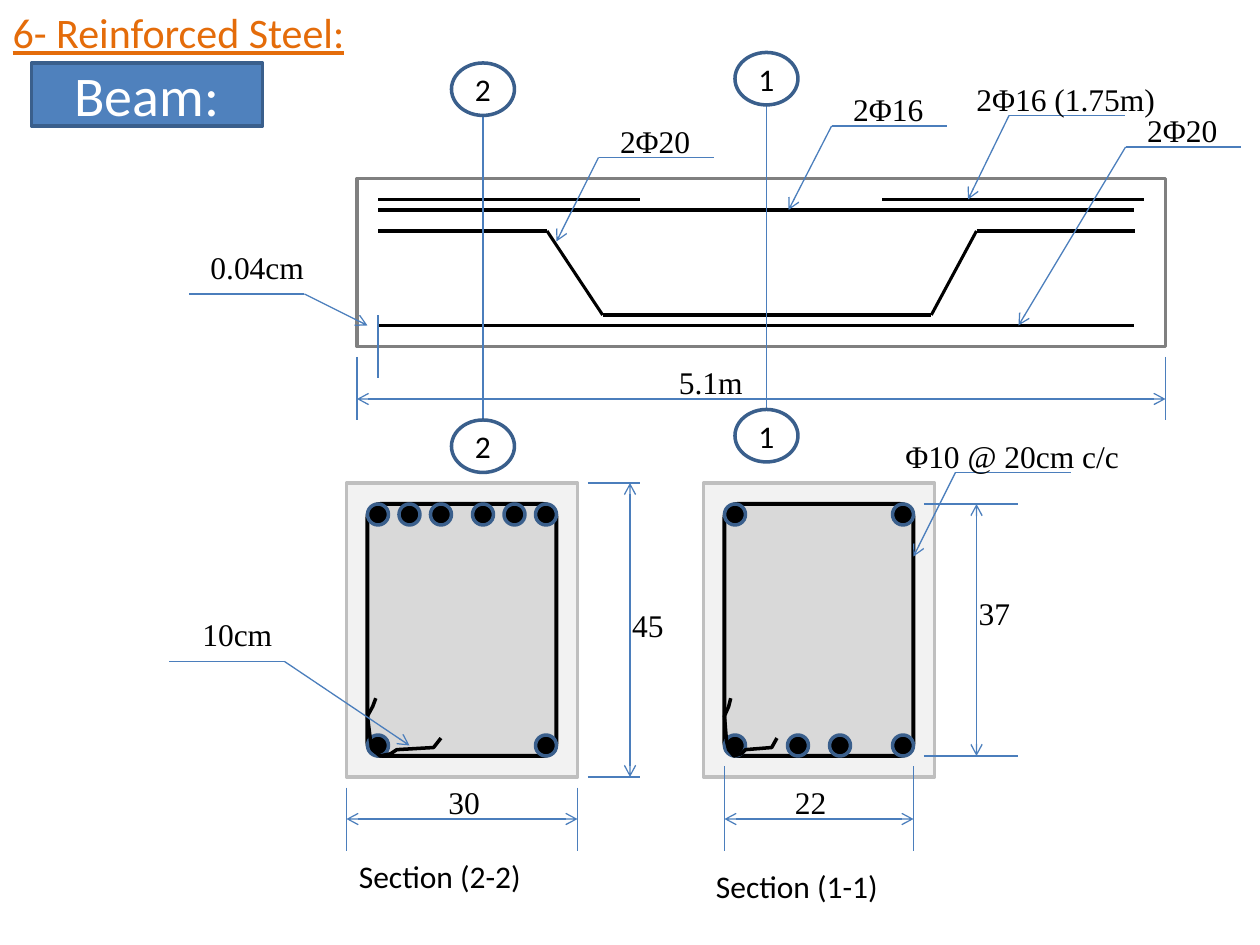
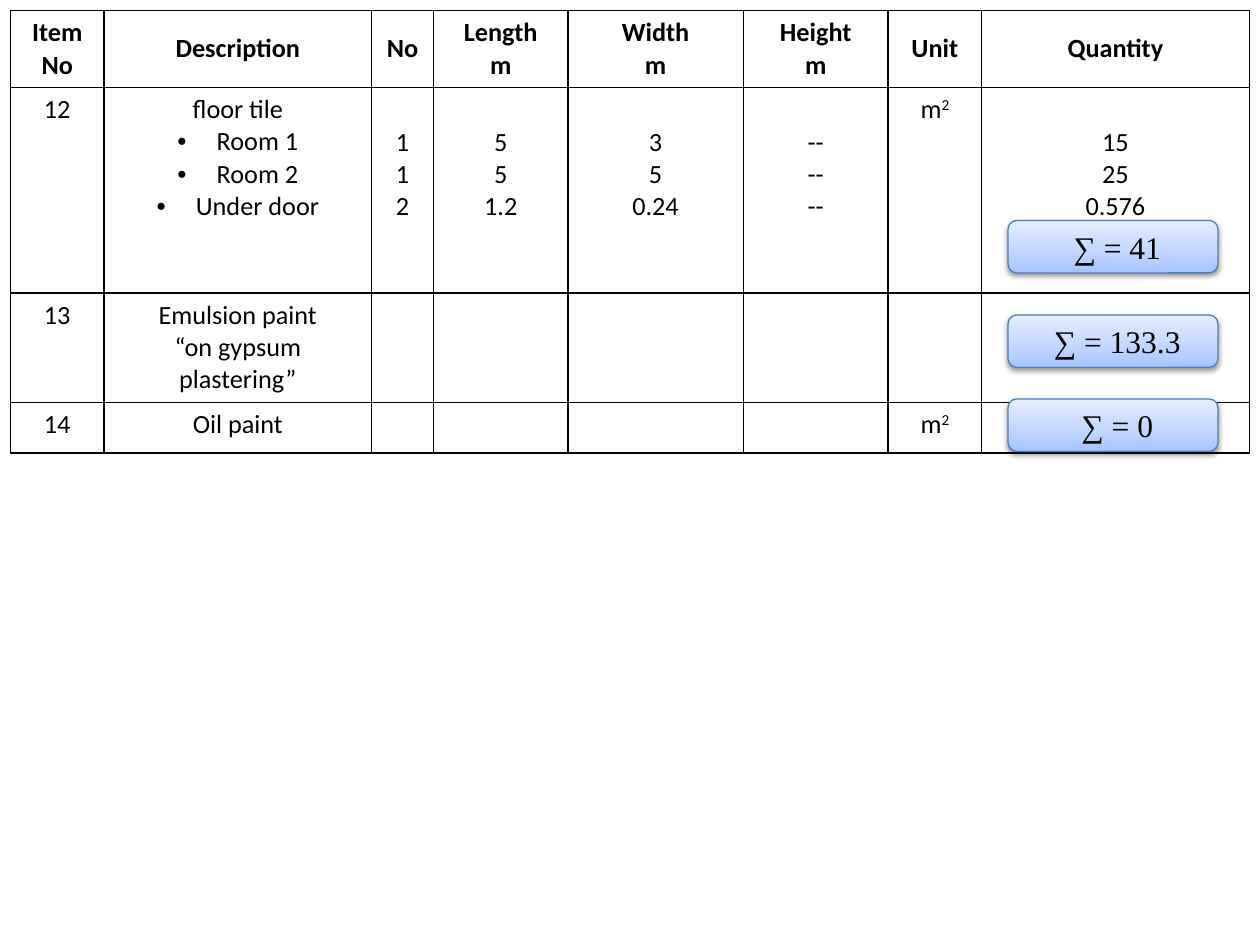
from lxml.etree import SubElement
from pptx import Presentation
from pptx.dml.color import RGBColor
from pptx.enum.shapes import MSO_CONNECTOR, MSO_SHAPE
from pptx.enum.text import MSO_ANCHOR, PP_ALIGN
from pptx.oxml.ns import qn
from pptx.util import Pt

PX = 7620  # EMU per px, 120 px to the inch
SANS, SERIF = "Calibri", "Times New Roman"
BLACK, WHITE, ORANGE = "000000", "FFFFFF", "E46C0A"
BLUE, EDGE_BLUE, LINE_BLUE = "4F81BD", "3A5F8C", "4B7EBC"
GREY, FRAME_EDGE, FRAME_FILL, CORE_FILL = "808080", "BFBFBF", "F2F2F2", "D9D9D9"

# ---- Content: beam drawing ----
HEADING, MEMBER = "6- Reinforced Steel:", "Beam:"
BEAM = (340, 170, 770, 160)
STRAIGHT_BARS = [((360, 200), (1080, 200)), ((360, 310), (1080, 310)),
                 ((840, 190), (1090, 190)), ((360, 190), (610, 190))]
BENT_BAR = [(360, 220), (521, 220), (574, 300), (887, 300), (930, 220), (1081, 220)]
COVER_TICK = ((360, 300), (360, 360))
# number, centre x, top of upper circle
CUTS = [("1", 730, 50), ("2", 460, 60)]
CUT_DROP = 340
# caption, frame left, caption top, top bars, bottom bars, hook width
SECTIONS = [
    ("Section (1-1)", 670, 820, (20, 180), (20, 80, 120, 180), 50),
    ("Section (2-2)", 330, 810, (20, 50, 80, 120, 150, 180), (20, 180), 70),
]
SECTION_TOP, SECTION_W, SECTION_H, COVER, BAR = 460, 220, 280, 20, 20
# x as a share of 70, y on the slide
HOOK = [(8, 665), (5, 673), (0, 682), (3, 706), (5, 714), (12, 720),
        (22, 718), (28, 714), (63, 712), (70, 703)]
# label, elbow, arrow tip, shelf direction
LEADERS = [
    ("2Φ20", (570, 150), (530, 230), 1),
    ("2Φ16", (792, 120), (751, 200), 1),
    ("2Φ16 (1.75m)", (961, 110), (922, 190), 1),
    ("2Φ20", (1072, 140), (970, 310), 1),
    ("0.04cm", (290, 280), (350, 310), -1),
    ("10cm", (271, 630), (390, 710), -1),
    ("Φ10 @ 20cm c/c", (910, 450), (870, 530), 1),
]
SHELF = 110
# label, start, end, extension line range, label centre x and top
DIMENSIONS = [
    ("5.1m", (340, 380), (1110, 380), (340, 400), (677, 340)),
    ("30", (330, 780), (550, 780), (750, 810), (442, 740)),
    ("22", (690, 780), (870, 780), (730, 810), (772, 740)),
    ("45", (600, 740), (600, 460), (560, 610), (617, 571)),
    ("37", (930, 720), (930, 480), (880, 970), (947, 560)),
]

# ---- Content: quantity table ----
COLUMN_WIDTHS = [89, 255, 59, 128, 167, 138, 89, 255]
ROW_HEIGHTS = [73, 196, 104, 48]
LINE_PITCH = 31
BULLET = "• "
HEADER = ["Item No", "Description", "No", "Length\nm", "Width\nm", "Height\nm",
          "Unit", "Quantity"]
ITEMS = [
    ["12", "floor tile\n• Room 1\n• Room 2\n• Under door", "1\n1\n2", "5\n5\n1.2",
     "3\n5\n0.24", "--\n--\n--", "m^2", "15\n25\n0.576"],
    ["13", "Emulsion paint\n“on gypsum plastering”", "", "", "", "", "", ""],
    ["14", "Oil paint", "", "", "", "", "m^2", ""],
]
TOTALS = [("∑ = 41", 210), ("∑ = 133.3", 300), ("∑ = 0", 380)]
TOTAL_GRADIENT = [(0, "A4C4FF"), (35, "BFD4FF"), (100, "E6EEFF")]


# ---- Shared helpers ----
def px(*lengths):
    return [round(length * PX) for length in lengths]


def rgb(code):
    return RGBColor.from_string(code)


def style(paragraph, size, font=SANS, color=BLACK, align=PP_ALIGN.CENTER, bold=False):
    paragraph.alignment = align
    paragraph.font.size = Pt(size)
    paragraph.font.name = font
    paragraph.font.bold = bold
    paragraph.font.color.rgb = rgb(color)


def outline(shape, color, width):
    shape.line.color.rgb = rgb(color)
    shape.line.width = Pt(width)


def add_figure(slide, kind, box, fill, edge, width=2):
    figure = slide.shapes.add_shape(kind, *px(*box))
    figure.shadow.inherit = False
    if fill:
        figure.fill.solid()
        figure.fill.fore_color.rgb = rgb(fill)
    else:
        figure.fill.background()
    outline(figure, edge, width)
    return figure


def write(shape, words, size, **look):
    frame = shape.text_frame
    frame.text = words
    frame.vertical_anchor = MSO_ANCHOR.MIDDLE
    style(frame.paragraphs[0], size, **look)


def add_line(slide, start, end, color=LINE_BLUE, width=0.75, arrows=()):
    line = slide.shapes.add_connector(MSO_CONNECTOR.STRAIGHT, *px(*start, *end))
    outline(line, color, width)
    properties = line._element.spPr
    for arrow in arrows:
        SubElement(properties.find(qn("a:ln")), qn(f"a:{arrow}"), type="arrow")
    SubElement(properties, qn("a:effectLst"))


def add_label(slide, words, left, top, width, wrap=False, **look):
    label = slide.shapes.add_textbox(*px(left, top, width, 48))
    label.text_frame.word_wrap = wrap
    label.text_frame.text = words
    style(label.text_frame.paragraphs[0], 18, **look)


def add_note(slide, words, center, top):
    add_label(slide, words, center - 115, top, 230, font=SERIF)


# ---- Beam slide parts ----
def draw_section(slide, caption, left, caption_top, top_bars, bottom_bars, hook_width):
    frame = add_figure(slide, MSO_SHAPE.FRAME,
                       (left, SECTION_TOP, SECTION_W, SECTION_H), FRAME_FILL, FRAME_EDGE)
    frame.adjustments[0] = 0.11
    stirrup_h = SECTION_H - 2 * COVER
    stirrup = add_figure(slide, MSO_SHAPE.ROUNDED_RECTANGLE,
                         (left + COVER, SECTION_TOP + COVER, SECTION_W - 2 * COVER, stirrup_h),
                         CORE_FILL, BLACK, 2.25)
    stirrup.adjustments[0] = 0.07
    top = SECTION_TOP + COVER
    for bars, bar_top in ((top_bars, top), (bottom_bars, top + stirrup_h - BAR)):
        for offset in bars:
            add_figure(slide, MSO_SHAPE.OVAL, (left + offset, bar_top, BAR, BAR),
                       BLACK, EDGE_BLUE)
    points = [(left + COVER + x * hook_width / 70, y) for x, y in HOOK]
    builder = slide.shapes.build_freeform(*points[0], scale=PX)
    builder.add_line_segments(points[1:], close=False)
    hook = builder.convert_to_shape()
    hook.shadow.inherit = False
    hook.fill.background()
    outline(hook, BLACK, 2)
    add_label(slide, caption, left, caption_top, 220, wrap=True, align=PP_ALIGN.LEFT)


def draw_cut(slide, number, center, top):
    add_line(slide, (center, top + 50), (center, top + CUT_DROP))
    for circle_top in (top, top + CUT_DROP):
        circle = add_figure(slide, MSO_SHAPE.OVAL, (center - 30, circle_top, 60, 50),
                            None, EDGE_BLUE)
        write(circle, number, 18)


def draw_leader(slide, words, elbow, tip, direction):
    x, y = elbow
    add_line(slide, elbow, tip, arrows=["tailEnd"])
    add_line(slide, elbow, (x + direction * SHELF, y))
    if direction > 0:
        add_note(slide, words, x + 54, y - 40)
    else:
        add_note(slide, words, x - 45, y - 50)


def draw_dimension(slide, words, start, end, extension, label_at):
    horizontal = start[1] == end[1]
    for x, y in (start, end):
        ends = [(x, v) if horizontal else (v, y) for v in extension]
        add_line(slide, *ends)
    add_line(slide, start, end, arrows=["headEnd", "tailEnd"])
    add_note(slide, words, *label_at)


def build_beam_slide(deck):
    slide = deck.slides.add_slide(deck.slide_layouts[5])
    heading = slide.shapes.title
    heading.left, heading.top, heading.width, heading.height = px(0, 0, 1200, 80)
    write(heading, HEADING, 24, color=ORANGE, align=PP_ALIGN.LEFT)
    heading.text_frame.vertical_anchor = MSO_ANCHOR.TOP
    heading.text_frame.paragraphs[0].font.underline = True
    heading.text_frame.paragraphs[0].space_before = Pt(5)

    for section in SECTIONS:
        draw_section(slide, *section)
    member = add_figure(slide, MSO_SHAPE.RECTANGLE, (30, 60, 220, 60), BLUE, EDGE_BLUE)
    write(member, MEMBER, 32, color=WHITE)

    # Beam elevation
    add_figure(slide, MSO_SHAPE.RECTANGLE, BEAM, None, GREY)
    for start, end in STRAIGHT_BARS + list(zip(BENT_BAR, BENT_BAR[1:])):
        add_line(slide, start, end, BLACK, 1.75)
    add_line(slide, *COVER_TICK)

    # Annotations
    for cut in CUTS:
        draw_cut(slide, *cut)
    for leader in LEADERS:
        draw_leader(slide, *leader)
    for dimension in DIMENSIONS:
        draw_dimension(slide, *dimension)


# ---- Table slide parts ----
def add_borders(cell):
    properties = cell._tc.get_or_add_tcPr()
    for place, side in enumerate(("lnL", "lnR", "lnT", "lnB")):
        border = SubElement(properties, qn(f"a:{side}"), w=str(Pt(1)))
        SubElement(SubElement(border, qn("a:solidFill")), qn("a:srgbClr"), val=BLACK)
        properties.insert(place, border)


def add_bullet(paragraph):
    properties = paragraph._p.get_or_add_pPr()
    properties.set("marL", "285750")
    properties.set("indent", "-285750")
    font = SubElement(properties, qn("a:buFont"), typeface="Arial")
    mark = SubElement(properties, qn("a:buChar"), char=BULLET.strip())
    properties.insert(0, font)
    properties.insert(1, mark)


def fill_cell(cell, words, header):
    cell.fill.background()
    add_borders(cell)
    cell.vertical_anchor = MSO_ANCHOR.MIDDLE if header else MSO_ANCHOR.TOP
    frame = cell.text_frame
    for index, line in enumerate(words.split("\n")):
        paragraph = frame.add_paragraph() if index else frame.paragraphs[0]
        if line.startswith(BULLET):
            add_bullet(paragraph)
        base, _, power = line.removeprefix(BULLET).partition("^")
        if base:
            paragraph.add_run().text = base
        if power:
            raised = paragraph.add_run()
            raised.text = power
            raised._r.get_or_add_rPr().set("baseline", "30000")
        style(paragraph, 15, bold=header)


def add_total(slide, words, top):
    total = add_figure(slide, MSO_SHAPE.ROUNDED_RECTANGLE, (960, top, 200, 50),
                       None, LINE_BLUE, 0.75)
    total.fill.gradient()
    total.fill.gradient_angle = 90
    properties = total._element.spPr
    stops = properties.find(qn("a:gradFill")).find(qn("a:gsLst"))
    for stop in list(stops):
        stops.remove(stop)
    for position, color in TOTAL_GRADIENT:
        stop = SubElement(stops, qn("a:gs"), pos=str(position * 1000))
        SubElement(stop, qn("a:srgbClr"), val=color)
    shadow = SubElement(properties.find(qn("a:effectLst")), qn("a:outerShdw"),
                        blurRad=str(Pt(3.1)), dist=str(Pt(1.6)), dir="5400000",
                        rotWithShape="0")
    tint = SubElement(shadow, qn("a:srgbClr"), val=BLACK)
    SubElement(tint, qn("a:alpha"), val="38000")
    write(total, words, 18, font=SERIF)
    total.text_frame.margin_left = px(20)[0]


def build_quantity_slide(deck):
    slide = deck.slides.add_slide(deck.slide_layouts[6])
    rows = [HEADER] + ITEMS
    size = (10, 10, sum(COLUMN_WIDTHS), sum(ROW_HEIGHTS))
    table = slide.shapes.add_table(len(rows), len(HEADER), *px(*size)).table
    table.first_row = table.horz_banding = False
    for column, width in zip(table.columns, px(*COLUMN_WIDTHS)):
        column.width = width
    for row, height in zip(table.rows, px(*ROW_HEIGHTS)):
        row.height = height
    for r, row in enumerate(rows):
        for c, words in enumerate(row):
            cell = table.cell(r, c)
            fill_cell(cell, words, header=r == 0)
            # Figures start level with the first bulleted line
            if r and c > 1 and "\n" in words:
                cell.margin_top = px(6 + LINE_PITCH)[0]
    for total in TOTALS:
        add_total(slide, *total)


def main():
    deck = Presentation()
    deck.slide_width, deck.slide_height = px(1200, 900)
    build_beam_slide(deck)
    build_quantity_slide(deck)
    deck.save("out.pptx")


if __name__ == "__main__":
    main()
